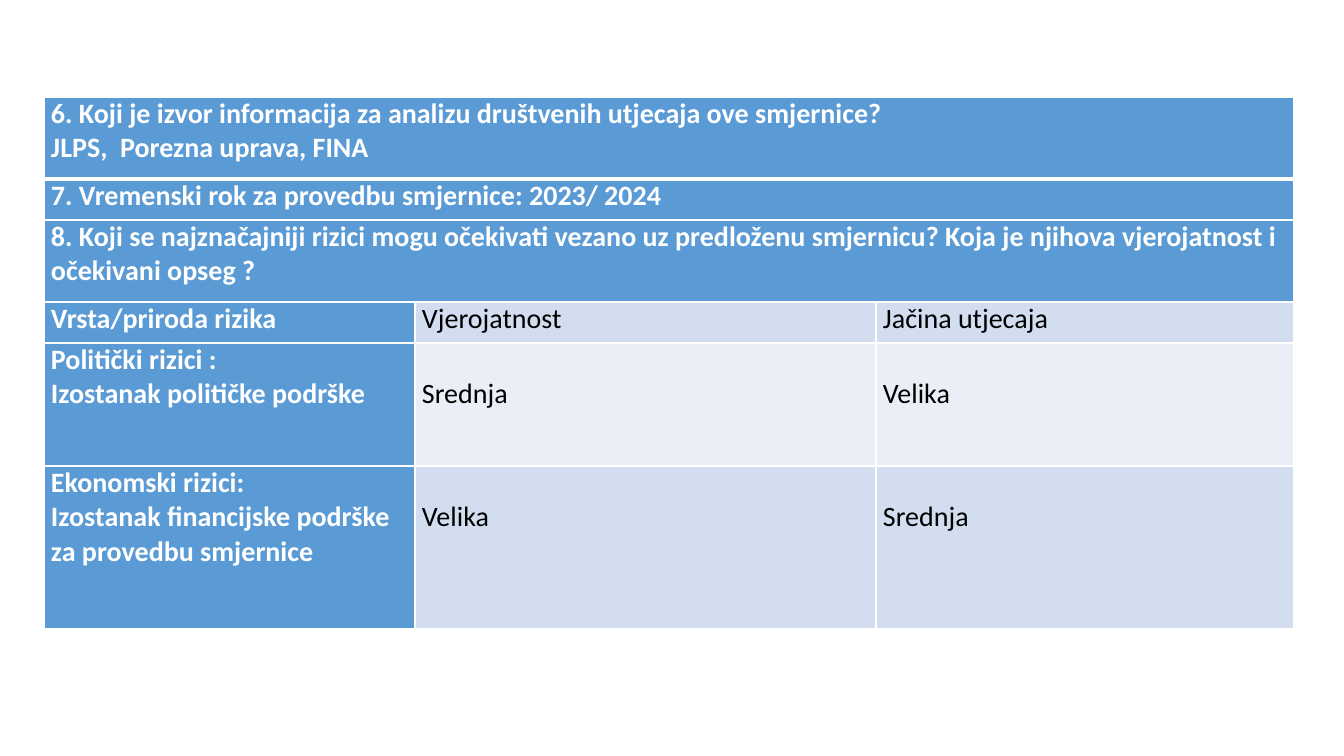
from lxml.etree import SubElement
from pptx import Presentation
from pptx.dml.color import RGBColor as RGB
from pptx.oxml import parse_xml
from pptx.oxml.ns import nsdecls
from pptx.util import Emu, Pt

COLORS = {
    "white": "FFFFFF",
    "black": "000000",
    "header": "5B9BD5",
    "band": "D2DEEF",
    "light": "EAEFF7",
}
COLUMNS = [371, 461, 418]
HEIGHTS = [82, 41, 82, 41, 123, 163]
LINE = 34
ROWS = [
    (["6. Koji je izvor informacija za analizu društvenih utjecaja ove smjernice?\n"
      "JLPS,  Porezna uprava, FINA"], "header", 0),
    (["7. Vremenski rok za provedbu smjernice: 2023/ 2024"], "header", 0),
    (["8. Koji se najznačajniji rizici mogu očekivati vezano uz predloženu smjernicu? "
      "Koja je njihova vjerojatnost i očekivani opseg ?"], "header", 0),
    (["Vrsta/priroda rizika", "Vjerojatnost", "Jačina utjecaja"], "band", 0),
    (["Politički rizici :\nIzostanak političke podrške", "Srednja", "Velika"],
     "light", LINE),
    (["Ekonomski rizici:\nIzostanak financijske podrške za provedbu smjernice",
      "Velika", "Srednja"], "band", LINE),
]


def px(n):
    return Emu(round(n * 914400 / 100.8))


class SlideBuilder:
    font = "Calibri"
    size = 20

    def __init__(self, prs):
        self.slide = prs.slides.add_slide(prs.slide_layouts[6])

    def borders(self, cell, **widths):
        tcPr = cell._tc.get_or_add_tcPr()
        for i, side in enumerate("LRTB"):
            width = Pt(widths.get(side, 1))
            tcPr.insert(i, parse_xml(
                f'<a:ln{side} {nsdecls("a")} w="{width}"><a:solidFill>'
                f'<a:srgbClr val="{COLORS["white"]}"/></a:solidFill></a:ln{side}>'))

    def cell(self, cell, text, fill, color, bold, top):
        cell.fill.solid()
        cell.fill.fore_color.rgb = RGB.from_string(COLORS[fill])
        cell.margin_left = cell.margin_right = px(7)
        cell.margin_top, cell.margin_bottom = px(top), 0
        tf = cell.text_frame
        for i, line in enumerate(text.split("\n")):
            p = tf.add_paragraph() if i else tf.paragraphs[0]
            r = p.add_run()
            r.text = line
            r.font.name, r.font.size, r.font.bold = self.font, Pt(self.size), bold
            r.font.color.rgb = RGB.from_string(COLORS[color])

    def table(self, x, y, columns, heights, rows):
        frame = self.slide.shapes.add_table(
            len(rows), len(columns), px(x), px(y), px(sum(columns)), px(sum(heights)))
        table = frame.table
        for col, width in zip(table.columns, columns):
            col.width = px(width)
        for row, height in zip(table.rows, heights):
            row.height = px(height)
        for i, (texts, fill, top) in enumerate(rows):
            for j, text in enumerate(texts):
                if j:
                    self.cell(table.cell(i, j), text, fill, "black", False, top)
                else:
                    self.cell(table.cell(i, j), text, "header", "white", True, 0)
            for j in range(len(columns)):
                self.borders(table.cell(i, j), T=3 if i == 1 else 1, B=3 if i == 0 else 1)
            if len(texts) == 1:
                table.cell(i, 0).merge(table.cell(i, len(columns) - 1))


def main():
    prs = Presentation()
    prs.slide_width, prs.slide_height = px(1344), px(756)
    SlideBuilder(prs).table(44, 97, COLUMNS, HEIGHTS, ROWS)
    prs.save("out.pptx")


if __name__ == "__main__":
    main()
